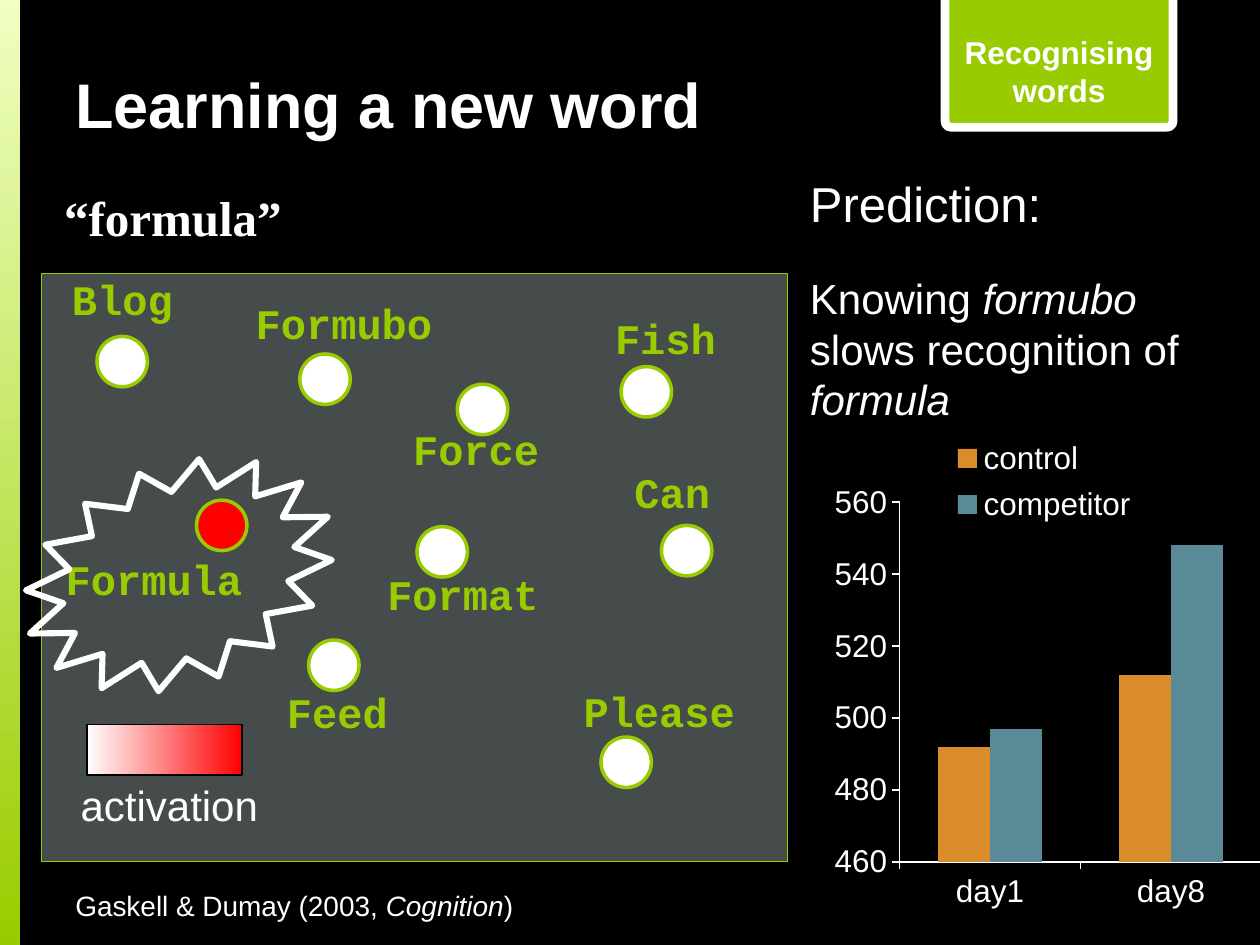
from dataclasses import dataclass

from lxml.etree import SubElement
from pptx import Presentation
from pptx.chart.data import CategoryChartData
from pptx.dml.color import RGBColor
from pptx.enum.chart import XL_CHART_TYPE as ChartType, XL_LEGEND_POSITION as LegendPos
from pptx.enum.chart import XL_TICK_MARK as Tick
from pptx.enum.shapes import MSO_SHAPE as Shape
from pptx.enum.text import MSO_ANCHOR as Anchor, PP_ALIGN as Align
from pptx.oxml.ns import qn
from pptx.util import Inches, Pt

COLUMNS, ROWS = 100, 75  # grid over the whole slide


@dataclass(frozen=True)
class Theme:
    back: str = "000000"
    ink: str = "FFFFFF"
    lime: str = "99CC00"
    pale_lime: str = "F0FFC2"
    panel: str = "464C4C"
    active: str = "FF0000"
    control: str = "DA8C2B"
    competitor: str = "5A8A98"
    sans: str = "Arial"
    serif: str = "Times New Roman"
    mono: str = "Courier New"
    title: int = 36
    heading: int = 28
    body: int = 24
    small: int = 18
    source: int = 16


class SlideBuilder:
    def __init__(self, deck, theme):
        self.theme = theme
        self.column = deck.slide_width / COLUMNS
        self.row = deck.slide_height / ROWS
        self.slide = deck.slides.add_slide(deck.slide_layouts[6])
        self.paint(self.slide.background.fill, theme.back)

    def place(self, left, top, width, height):
        return (round(left * self.column), round(top * self.row),
                round(width * self.column), round(height * self.row))

    @staticmethod
    def paint(fill, color):
        fill.solid()
        fill.fore_color.rgb = RGBColor.from_string(color)

    def outline(self, line, color, weight):
        self.paint(line.fill, color)
        line.width = Pt(weight)

    def shape(self, kind, at, fill=None, line=None, weight=1, rotation=0):
        """fill is a colour, a (start, end, angle) gradient, or None."""
        item = self.slide.shapes.add_shape(kind, *self.place(*at))
        item.shadow.inherit = False
        item.rotation = rotation
        if fill is None:
            item.fill.background()
        elif isinstance(fill, tuple):
            item.fill.gradient()
            item.fill.gradient_angle = fill[2]
            for stop, color in zip(item.fill.gradient_stops, fill):
                stop.color.rgb = RGBColor.from_string(color)
        else:
            self.paint(item.fill, fill)
        if line:
            self.outline(item.line, line, weight)
        else:
            item.line.fill.background()
        return item

    def set_text(self, frame, paragraphs, inset=(0.1, 0.05), align=Align.LEFT,
                 anchor=Anchor.TOP, font=None, color=None, bold=False):
        """paragraphs: (size, space before, runs); a run is (text, italic)."""
        frame.word_wrap = True
        frame.vertical_anchor = anchor
        frame.margin_left = frame.margin_right = Inches(inset[0])
        frame.margin_top = frame.margin_bottom = Inches(inset[1])
        for index, (size, before, runs) in enumerate(paragraphs):
            paragraph = frame.add_paragraph() if index else frame.paragraphs[0]
            paragraph.alignment = align
            if before:
                paragraph.space_before = Pt(before)
            for words, italic in runs:
                run = paragraph.add_run()
                run.text = words
                run.font.name = font or self.theme.sans
                run.font.size = Pt(size)
                run.font.bold, run.font.italic = bold, italic
                run.font.color.rgb = RGBColor.from_string(color or self.theme.ink)

    def text(self, at, paragraphs, **style):
        box = self.slide.shapes.add_textbox(*self.place(*at))
        self.set_text(box.text_frame, paragraphs, **style)

    def node(self, word, dot, label, fill):
        """A lexicon entry: a round node and its word."""
        t = self.theme
        self.shape(Shape.OVAL, (*dot, 4, 4), fill, t.lime, 2)
        holder = self.shape(Shape.ROUNDED_RECTANGLE, label)
        self.set_text(holder.text_frame, [(t.body, 0, [(word, False)])],
                      inset=(0.01, 0.01), font=t.mono, color=t.lime, bold=True)

    @staticmethod
    def manual_layout(part, box, inner=False):
        """Fix a chart part at (x, y, w, h), as shares of the chart."""
        layout = part.find(qn("c:layout"))
        if layout is None:
            layout = part.makeelement(qn("c:layout"))
            before = part.find(qn("c:legendPos"))
            if before is None:
                part.insert(0, layout)
            else:
                before.addnext(layout)
        for child in list(layout):
            layout.remove(child)
        manual = SubElement(layout, qn("c:manualLayout"))
        settings = [("layoutTarget", "inner")] if inner else []
        settings += [("xMode", "edge"), ("yMode", "edge"), *zip("xywh", map(str, box))]
        for tag, value in settings:
            SubElement(manual, qn(f"c:{tag}")).set("val", value)

    def column_chart(self, at, categories, series, scale, plot_box, legend_box):
        t = self.theme
        data = CategoryChartData()
        data.categories = categories
        for name, values, _ in series:
            data.add_series(name, values)
        chart = self.slide.shapes.add_chart(
            ChartType.COLUMN_CLUSTERED, *self.place(*at), data).chart
        chart.has_title = False
        chart.font.name, chart.font.size = t.sans, Pt(t.small)
        chart.font.color.rgb = RGBColor.from_string(t.ink)

        plot = chart.plots[0]
        plot.vary_by_categories = False
        plot.gap_width, plot.overlap = 150, 0
        for bars, (_, _, color) in zip(plot.series, series):
            self.paint(bars.format.fill, color)

        for axis in (chart.category_axis, chart.value_axis):
            axis.has_major_gridlines = False
            axis.major_tick_mark, axis.minor_tick_mark = Tick.OUTSIDE, Tick.NONE
            self.outline(axis.format.line, t.ink, 1)
        value = chart.value_axis
        value.minimum_scale, value.maximum_scale, value.major_unit = scale

        chart.has_legend = True
        chart.legend.position = LegendPos.RIGHT
        chart.legend.include_in_layout = False
        area = plot._element.getparent()
        self.manual_layout(area, plot_box, inner=True)
        self.manual_layout(area.getparent().find(qn("c:legend")), legend_box)


def main():
    deck = Presentation()
    deck.slide_width, deck.slide_height = Inches(10), Inches(7.5)
    t = Theme()
    s = SlideBuilder(deck, t)

    # Section tab and side bar
    tab = s.shape(Shape.ROUND_2_SAME_RECTANGLE, (75, -1.7, 18.1, 11.8),
                  t.lime, t.ink, 5, rotation=180)
    tab.adjustments[0], tab.adjustments[1] = 0.04, 0
    s.shape(Shape.RECTANGLE, (0, 0, 1.6, ROWS), (t.lime, t.pale_lime, 90))
    s.text((75, 3.3, 18.1, 5.8), [(t.small, 0, [("Recognising words", False)])],
           align=Align.CENTER, anchor=Anchor.BOTTOM, bold=True)

    # Title and spoken word
    s.text((5, -0.8, 69.2, 12.5), [(t.title, 0, [("Learning a new word", False)])],
           anchor=Anchor.BOTTOM, bold=True)
    s.text((4.5, 14.4, 49, 5.5), [(t.heading, 0, [("“formula”", False)])],
           inset=(0.06, 0.05), font=t.serif, bold=True)

    # Lexicon: word, node position, label box, node fill
    s.shape(Shape.RECTANGLE, (3.3, 21.7, 59.2, 46.7), t.panel, t.lime, 0.75)
    lexicon = [
        ("Format", (33.1, 41.8), (30.3, 44.7, 26.5, 7), t.ink),
        ("Formula", (15.6, 39.7), (4.6, 43.3, 21.2, 10.6), t.active),
        ("Fish", (49.3, 29.1), (48.2, 24.2, 10.6, 10.6), t.ink),
        ("Feed", (24.5, 50.8), (22.4, 54.1, 19.4, 5.8), t.ink),
        ("Please", (47.7, 58.5), (45.7, 53.8, 14.3, 10.6), t.ink),
        ("Can", (52.5, 41.7), (49.9, 36.6, 12.6, 7.3), t.ink),
        ("Blog", (7.7, 26.7), (5.1, 21.1, 17.3, 10.6), t.ink),
        ("Force", (36.3, 30.5), (32.5, 33.3, 14.3, 4), t.ink),
        ("Formubo", (23.8, 28.1), (20, 23.3, 20.8, 4), t.ink),
    ]
    for entry in lexicon:
        s.node(*entry)
    burst = s.shape(Shape.STAR_16_POINT, (1.5, 37, 25.4, 17.3),
                    line=t.ink, weight=3.5, rotation=338.6)
    burst.adjustments[0] = 0.375

    # Activation key
    s.shape(Shape.RECTANGLE, (6.9, 57.5, 12.3, 4), (t.ink, t.active, 0), t.back, 1)
    s.text((5.8, 61.4, 19.1, 5.1), [(t.body, 0, [("activation", False)])],
           inset=(0.06, 0.05))

    # Prediction
    s.text((63.3, 13.3, 36.7, 21.2), [
        (t.heading, 0, [("Prediction:", False)]),
        (t.body, 23, [("Knowing ", False), ("formubo ", True),
                      ("slows recognition of ", False), ("formula", True)]),
    ])
    s.column_chart(
        (64.2, 32.5, 36, 40.8), ["day1", "day8"],
        [("control", (492, 512), t.control),
         ("competitor", (497, 548), t.competitor)],
        scale=(460, 560, 20), plot_box=(0.2, 0.18, 0.8, 0.7),
        legend_box=(0.31, 0.04, 0.42, 0.2))

    # Source
    s.text((5, 70, 86.7, 4.2), [(t.source, 0, [
        ("Gaskell & Dumay (2003, ", False), ("Cognition", True), (")", False)])])

    deck.save("out.pptx")


if __name__ == "__main__":
    main()
